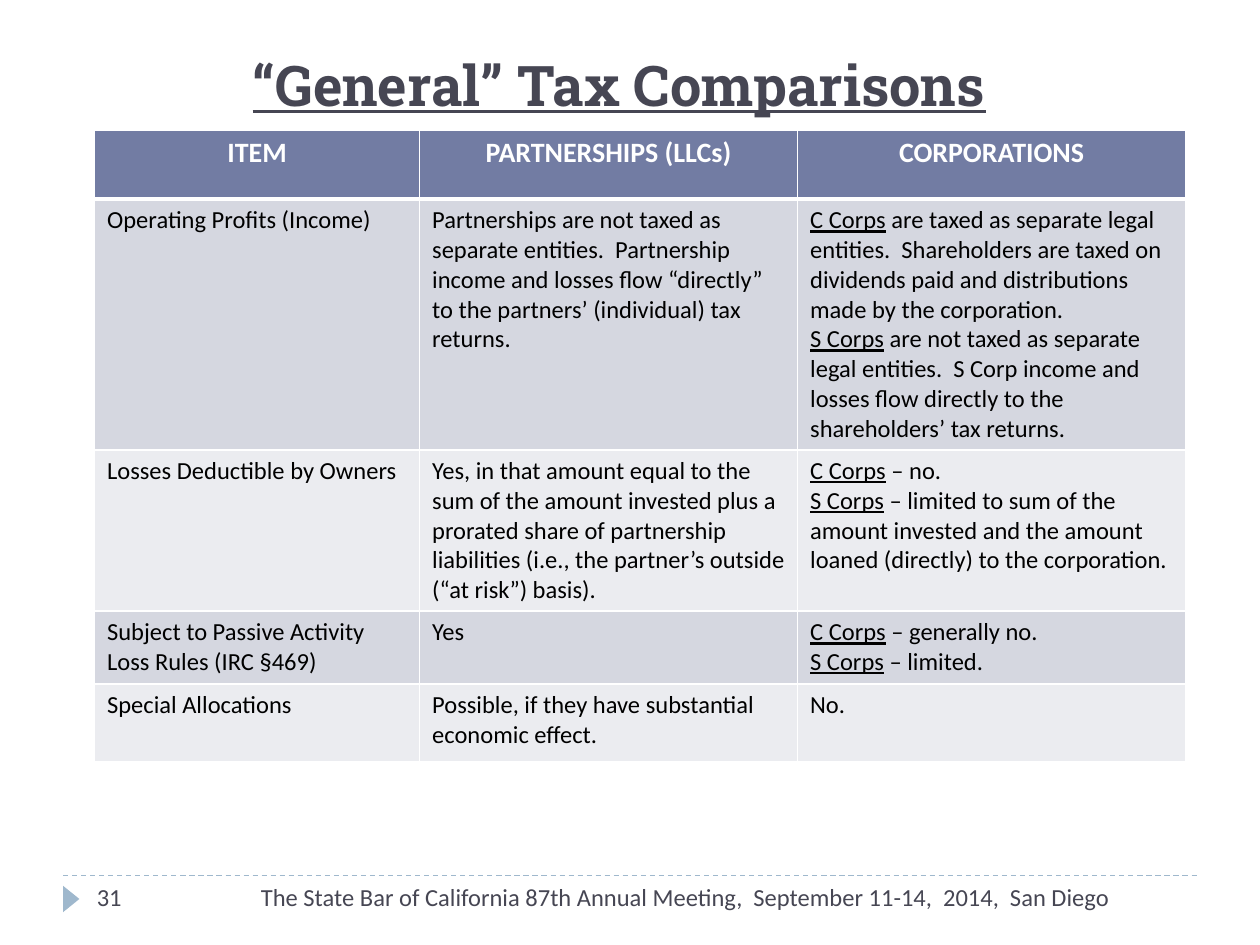
from lxml.etree import SubElement
from pptx import Presentation
from pptx.dml.color import RGBColor
from pptx.enum.dml import MSO_LINE
from pptx.enum.shapes import MSO_CONNECTOR, MSO_SHAPE
from pptx.enum.text import MSO_ANCHOR as Anchor, PP_ALIGN as Align
from pptx.oxml.ns import qn
from pptx.util import Inches, Pt

INK, BLUE, WHITE, BLACK = "464653", "9FB8CD", "FFFFFF", "000000"
HEAD, BANDS = "727CA3", ("D5D7E0", "EBECF0")
COLS = (2.58, 3, 3.08)
ROWS = (0.55, 1.99, 1.28, 0.58, 0.62)

# A cell is a list of paragraphs; a paragraph is (underlined lead, rest).
C, S = "C Corps", "S Corps"
CELLS = [
    [[("", "ITEM")], [("", "PARTNERSHIPS (LLCs)")], [("", "CORPORATIONS")]],
    [
        [("", "Operating Profits (Income)")],
        [("", "Partnerships are not taxed as separate entities.  Partnership income and "
              "losses flow “directly” to the partners’ (individual) tax returns.")],
        [(C, " are taxed as separate legal entities.  Shareholders are taxed on "
             "dividends paid and distributions made by the corporation."),
         (S, " are not taxed as separate legal entities.  S Corp income and losses "
             "flow directly to the shareholders’ tax returns.")],
    ],
    [
        [("", "Losses Deductible by Owners")],
        [("", "Yes, in that amount equal to the sum of the amount invested plus a prorated "
              "share of partnership liabilities (i.e., the partner’s outside "
              "(“at risk”) basis).")],
        [(C, " – no."),
         (S, " – limited to sum of the amount invested and the amount loaned "
             "(directly) to the corporation.")],
    ],
    [
        [("", "Subject to Passive Activity Loss Rules (IRC §469)")],
        [("", "Yes")],
        [(C, " – generally no."), (S, " – limited.")],
    ],
    [
        [("", "Special Allocations")],
        [("", "Possible, if they have substantial economic effect.")],
        [("", "No.")],
    ],
]


def rgb(code):
    return RGBColor.from_string(code)


def style(run, size, color, bold=False, line=False, face="Calibri"):
    font = run.font
    font.name, font.size, font.bold, font.underline = face, Pt(size), bold, line
    font.color.rgb = rgb(color)


def add_text(slide, text, box, size, align=Align.LEFT, anchor=Anchor.TOP, **look):
    frame = slide.shapes.add_textbox(*map(Inches, box)).text_frame
    frame.word_wrap = True
    frame.vertical_anchor = anchor
    frame.text = text
    par = frame.paragraphs[0]
    par.alignment = align
    style(par.runs[0], size, INK, **look)


def add_rule(slide):
    rule = slide.shapes.add_connector(
        MSO_CONNECTOR.STRAIGHT, Inches(0.5), Inches(6.95), Inches(9.5), Inches(6.95))
    rule.line.color.rgb = rgb(BLUE)
    rule.line.width = Pt(0.75)
    rule.line.dash_style = MSO_LINE.DASH
    SubElement(rule._element.spPr, qn("a:effectLst"))


def add_marker(slide):
    mark = slide.shapes.add_shape(
        MSO_SHAPE.ISOSCELES_TRIANGLE, *map(Inches, (0.46, 7.07, 0.21, 0.13)))
    mark.rotation = 90
    mark.shadow.inherit = False
    mark.fill.solid()
    mark.fill.fore_color.rgb = rgb(BLUE)
    mark.line.fill.background()


def add_borders(cell, top, bottom):
    """Draw white cell edges; call before the fill is set."""
    props = cell._tc.get_or_add_tcPr()
    for side, width in (("L", 1), ("R", 1), ("T", top), ("B", bottom)):
        edge = SubElement(props, qn("a:ln" + side), w=str(Pt(width)))
        fill = SubElement(edge, qn("a:solidFill"))
        SubElement(fill, qn("a:srgbClr"), val=WHITE)


def fill_cell(cell, pars, row):
    head = row == 0
    add_borders(cell, 3 if row == 1 else 1, 3 if head else 1)
    cell.fill.solid()
    cell.fill.fore_color.rgb = rgb(HEAD if head else BANDS[(row - 1) % 2])
    frame = cell.text_frame
    for i, (lead, rest) in enumerate(pars):
        par = frame.add_paragraph() if i else frame.paragraphs[0]
        par.alignment = Align.CENTER if head else Align.LEFT
        for text, line in ((lead, True), (rest, False)):
            if text:
                run = par.add_run()
                run.text = text
                style(run, 16 if head else 14, WHITE if head else BLACK, head, line)


def add_grid(slide):
    box = (0.75, 1.03, sum(COLS), sum(ROWS))
    table = slide.shapes.add_table(len(ROWS), len(COLS), *map(Inches, box)).table
    for col, width in zip(table.columns, COLS):
        col.width = Inches(width)
    for r, (row, height) in enumerate(zip(table.rows, ROWS)):
        row.height = Inches(height)
        for cell, pars in zip(row.cells, CELLS[r]):
            fill_cell(cell, pars, r)


def main():
    deck = Presentation()
    deck.slide_width, deck.slide_height = Inches(10), Inches(7.5)
    slide = deck.slides.add_slide(deck.slide_layouts[6])
    add_rule(slide)
    add_marker(slide)
    add_text(slide, "The State Bar of California 87th Annual Meeting,  "
             "September 11-14,  2014,  San Diego", (1.58, 6.95, 7.33, 0.4), 14, Align.RIGHT)
    add_text(slide, "31", (0.67, 6.95, 2.17, 0.4), 14)
    add_text(slide, "“General” Tax Comparisons", (0.51, 0.33, 8.81, 0.67), 32,
             Align.CENTER, Anchor.MIDDLE, bold=True, line=True, face="Roboto Slab")
    add_grid(slide)
    deck.save("out.pptx")


if __name__ == "__main__":
    main()
